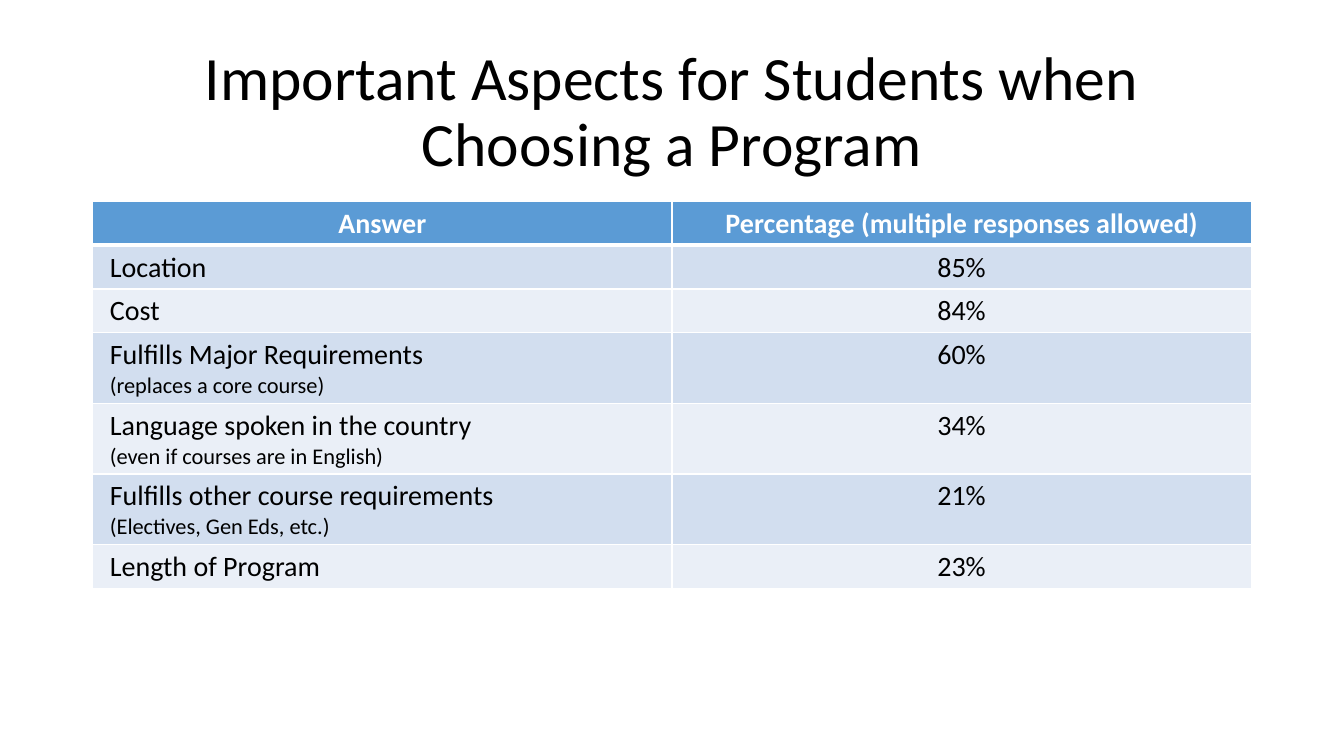
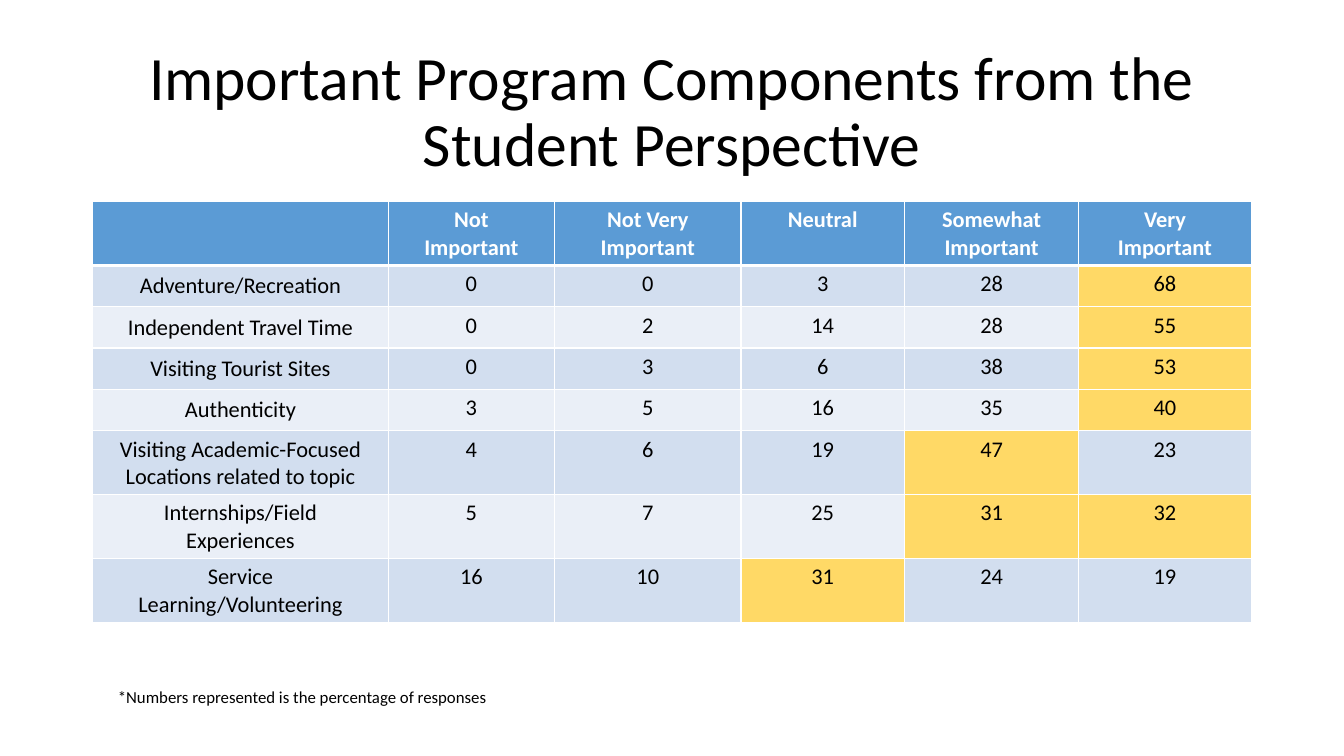
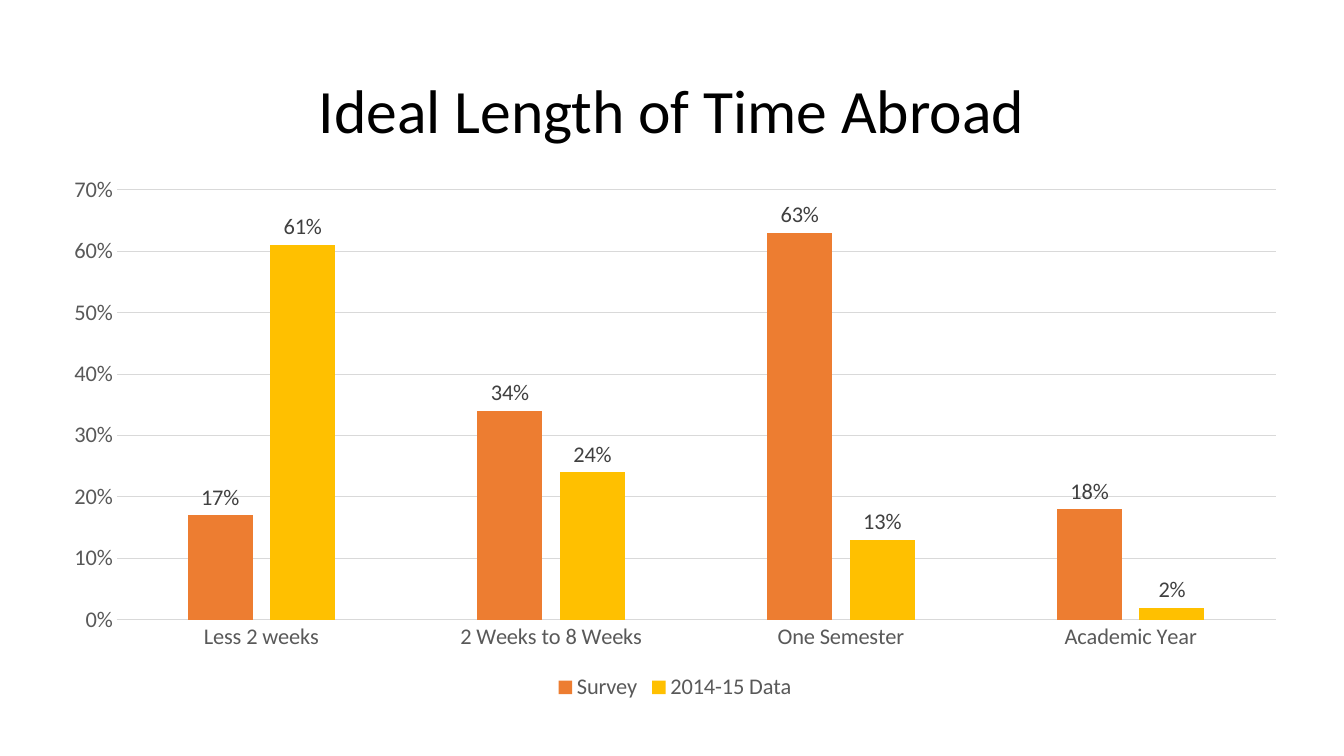
from dataclasses import dataclass

from lxml import etree
from pptx import Presentation, util as u
from pptx.chart.data import CategoryChartData
from pptx.dml.color import RGBColor
from pptx.enum import chart as ch, text as tx
from pptx.oxml.ns import qn


@dataclass(frozen=True)
class Theme:
    font: str = "Calibri"
    ink: str = "000000"
    white: str = "FFFFFF"
    header: str = "5B9BD5"
    bands: tuple = ("D2DEEF", "EAEFF7")
    highlight: str = "FFD966"
    axis_text: str = "595959"
    label_text: str = "404040"
    grid: str = "D9D9D9"
    series: tuple = ("ED7D31", "FFC000")
    title_size: int = 44
    large: int = 20
    body: int = 16
    note: int = 12


THEME = Theme()
SLIDE_W, SLIDE_H = 13.33, 7.5
MARGIN = 0.92
CONTENT_W = SLIDE_W - 2 * MARGIN
TITLE_BOX = (MARGIN, 0.4, CONTENT_W, 1.45)
TABLE_TOP, ROW_H = 2, 0.41
CENTER, LEFT = tx.PP_ALIGN.CENTER, tx.PP_ALIGN.LEFT


def inches(box):
    return [u.Inches(length) for length in box]


def style_font(font, size, color, bold=False):
    font.name, font.size, font.bold = THEME.font, u.Pt(size), bold
    font.color.rgb = RGBColor.from_string(color)


def add_run(paragraph, words, size, color=THEME.ink, bold=False):
    run = paragraph.add_run()
    run.text = words
    style_font(run.font, size, color, bold)


def add_text(slide, box, words, size, align=LEFT, anchor=tx.MSO_ANCHOR.TOP, spacing=1.0):
    frame = slide.shapes.add_textbox(*inches(box)).text_frame
    frame.word_wrap = True
    frame.vertical_anchor = anchor
    paragraph = frame.paragraphs[0]
    paragraph.alignment, paragraph.line_spacing = align, spacing
    add_run(paragraph, words, size)


def new_slide(deck, title):
    slide = deck.slides.add_slide(deck.slide_layouts[6])
    add_text(slide, TITLE_BOX, title, THEME.title_size, CENTER,
             tx.MSO_ANCHOR.MIDDLE, 0.9)
    return slide


# Tables
def add_borders(cell, top, bottom):
    props = cell._tc.get_or_add_tcPr()
    for side, width in (("L", 1), ("R", 1), ("T", top), ("B", bottom)):
        line = etree.SubElement(props, qn(f"a:ln{side}"), w=str(u.Pt(width)))
        fill = etree.SubElement(line, qn("a:solidFill"))
        etree.SubElement(fill, qn("a:srgbClr"), val=THEME.white)


def style_cell(cell, row, fill):
    add_borders(cell, top=3 if row == 1 else 1, bottom=3 if row == 0 else 1)
    cell.fill.solid()
    cell.fill.fore_color.rgb = RGBColor.from_string(fill)
    cell.margin_left = cell.margin_right = u.Inches(0.17)
    cell.margin_top = cell.margin_bottom = u.Inches(0.05)


def band(row):
    return THEME.header if row == 0 else THEME.bands[(row - 1) % 2]


def add_grid(slide, origin, widths, row_count):
    left, top = origin
    box = (left, top, sum(widths), ROW_H * row_count)
    table = slide.shapes.add_table(row_count, len(widths), *inches(box)).table
    for column, width in zip(table.columns, widths):
        column.width = u.Inches(width)
    for row in table.rows:
        row.height = u.Inches(ROW_H)
    return table


def fill_cell(cell, row, words, size, align=CENTER, fill=None, detail=None):
    style_cell(cell, row, fill or band(row))
    if not words:
        return
    paragraph = cell.text_frame.paragraphs[0]
    paragraph.alignment = align
    header = row == 0
    add_run(paragraph, words, size, THEME.white if header else THEME.ink, header)
    if detail:
        paragraph.add_line_break()
        add_run(paragraph, detail, THEME.body)


def add_answer_table(slide, origin, width, header, answers):
    table = add_grid(slide, origin, [width / 2] * 2, len(answers) + 1)
    for col, words in enumerate(header):
        fill_cell(table.cell(0, col), 0, words, THEME.large)
    for row, (answer, detail, share) in enumerate(answers, 1):
        fill_cell(table.cell(row, 0), row, answer, THEME.large, LEFT, detail=detail)
        fill_cell(table.cell(row, 1), row, f"{share}%", THEME.large)


def add_rating_table(slide, origin, widths, header, ratings):
    table = add_grid(slide, origin, widths, len(ratings) + 1)
    for col, words in enumerate(header):
        fill_cell(table.cell(0, col), 0, words, THEME.body)
    for row, (component, *shares) in enumerate(ratings, 1):
        name_cell = table.cell(row, 0)
        fill_cell(name_cell, row, component, THEME.body)
        name_cell.vertical_anchor = tx.MSO_ANCHOR.MIDDLE
        # Highlight the top share and any within one point of it
        for col, share in enumerate(shares, 1):
            fill = THEME.highlight if share >= max(shares) - 1 else None
            fill_cell(table.cell(row, col), row, str(share), THEME.body, fill=fill)


# Chart
def style_line(line, color):
    line.color.rgb = RGBColor.from_string(color)
    line.width = u.Pt(0.75)


def add_length_chart(slide, box, categories, series):
    data = CategoryChartData(number_format="0%")
    data.categories = categories
    for name, shares in series:
        data.add_series(name, shares)
    chart = slide.shapes.add_chart(
        ch.XL_CHART_TYPE.COLUMN_CLUSTERED, *inches(box), data).chart
    style_font(chart.font, THEME.body, THEME.ink)
    chart.has_title = False

    chart.has_legend = True
    chart.legend.position = ch.XL_LEGEND_POSITION.BOTTOM
    chart.legend.include_in_layout = False
    style_font(chart.legend.font, THEME.body, THEME.axis_text)

    lengths, shares_axis = chart.category_axis, chart.value_axis
    for axis in (lengths, shares_axis):
        axis.major_tick_mark = axis.minor_tick_mark = ch.XL_TICK_MARK.NONE
        style_font(axis.tick_labels.font, THEME.body, THEME.axis_text)
    style_line(lengths.format.line, THEME.grid)
    shares_axis.format.line.fill.background()
    style_line(shares_axis.major_gridlines.format.line, THEME.grid)
    shares_axis.minimum_scale, shares_axis.maximum_scale = 0, 0.7
    shares_axis.major_unit = 0.1
    shares_axis.tick_labels.number_format = "0%"
    shares_axis.tick_labels.number_format_is_linked = False

    plot = chart.plots[0]
    plot.gap_width, plot.overlap, plot.vary_by_categories = 219, -27, False
    for bars, color in zip(plot.series, THEME.series):
        bars.format.fill.solid()
        bars.format.fill.fore_color.rgb = RGBColor.from_string(color)
        labels = bars.data_labels
        labels.show_value = True
        labels.position = ch.XL_LABEL_POSITION.OUTSIDE_END
        labels.number_format, labels.number_format_is_linked = "0%", False
        style_font(labels.font, THEME.body, THEME.label_text)


# Slides
def aspects_slide(deck):
    slide = new_slide(deck, "Important Aspects for Students when Choosing a Program")
    add_answer_table(
        slide, (MARGIN, TABLE_TOP), CONTENT_W,
        ("Answer", "Percentage (multiple responses allowed)"),
        [("Location", None, 85),
         ("Cost", None, 84),
         ("Fulfills Major Requirements", "(replaces a core course)", 60),
         ("Language spoken in the country", "(even if courses are in English)", 34),
         ("Fulfills other course requirements", "(Electives, Gen Eds, etc.)", 21),
         ("Length of Program", None, 23)])


def components_slide(deck):
    slide = new_slide(deck, "Important Program Components from the Student Perspective")
    add_rating_table(
        slide, (MARGIN, TABLE_TOP), (2.93, 1.65, 1.85, 1.62, 1.73, 1.71),
        ("", "Not Important", "Not Very Important", "Neutral",
         "Somewhat Important", "Very Important"),
        [("Adventure/Recreation", 0, 0, 3, 28, 68),
         ("Independent Travel Time", 0, 2, 14, 28, 55),
         ("Visiting Tourist Sites", 0, 3, 6, 38, 53),
         ("Authenticity", 3, 5, 16, 35, 40),
         ("Visiting Academic-Focused Locations related to topic", 4, 6, 19, 47, 23),
         ("Internships/Field Experiences", 5, 7, 25, 31, 32),
         ("Service Learning/Volunteering", 16, 10, 31, 24, 19)])
    add_text(slide, (1.07, 6.76, 6.28, 0.3),
             "*Numbers represented is the percentage of responses", THEME.note)


def length_slide(deck):
    slide = new_slide(deck, "Ideal Length of Time Abroad")
    add_length_chart(
        slide, (0.49, 1.64, 12.41, 5.36),
        ("Less 2 weeks", "2 Weeks to 8 Weeks", "One Semester", "Academic Year"),
        [("Survey", (0.17, 0.34, 0.63, 0.18)),
         ("2014-15 Data", (0.61, 0.24, 0.13, 0.02))])


def main():
    deck = Presentation()
    deck.slide_width, deck.slide_height = u.Inches(SLIDE_W), u.Inches(SLIDE_H)
    for build in (aspects_slide, components_slide, length_slide):
        build(deck)
    deck.save("out.pptx")


if __name__ == "__main__":
    main()
